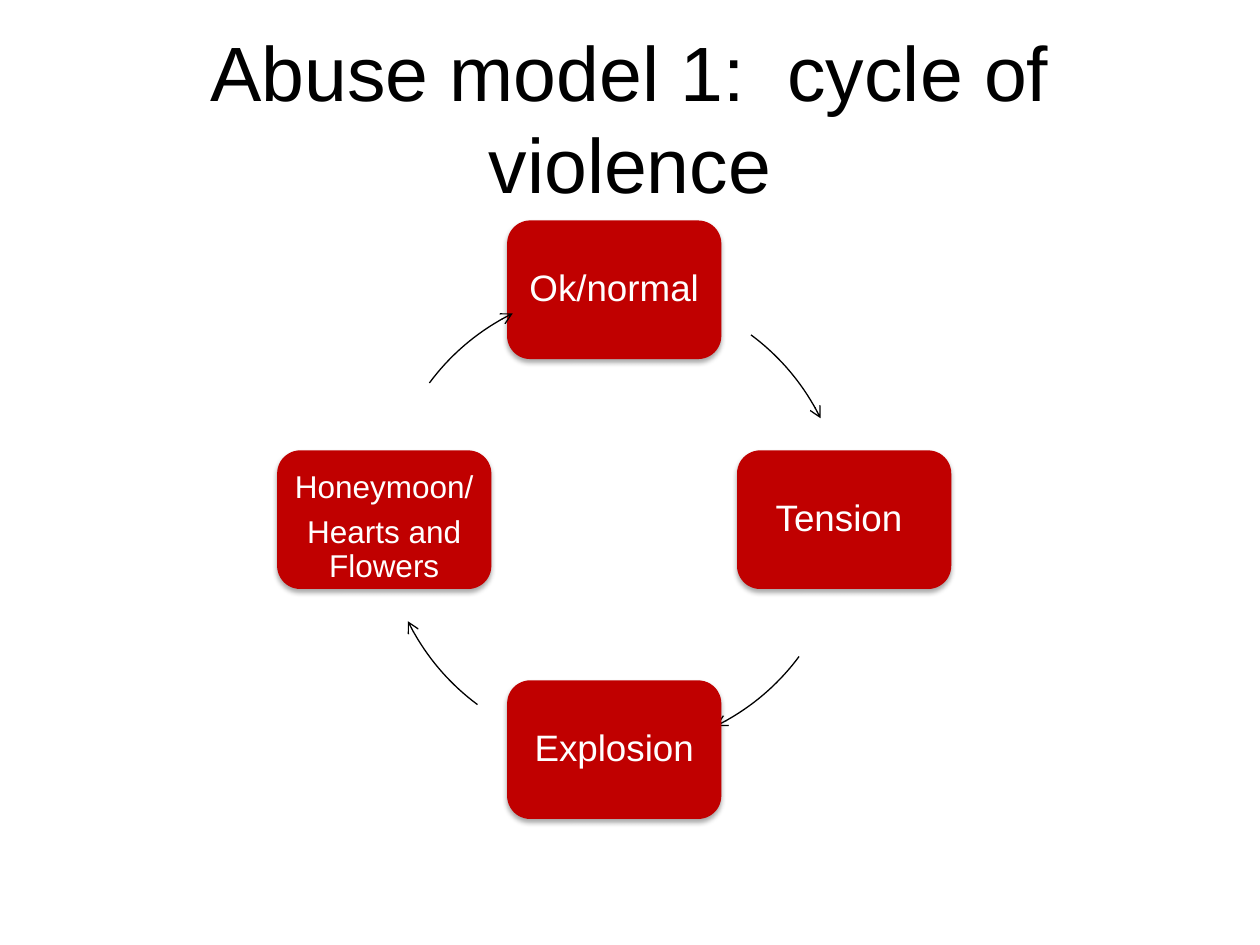
"""Build the cycle of violence slide: four stages on a ring, joined by arc arrows."""
from dataclasses import dataclass
from math import cos, radians, sin

from lxml.etree import SubElement
from pptx import Presentation
from pptx.dml.color import RGBColor
from pptx.enum.shapes import MSO_SHAPE
from pptx.enum.text import MSO_ANCHOR, MSO_AUTO_SIZE, PP_ALIGN
from pptx.oxml.ns import qn
from pptx.shapes.autoshape import Shape
from pptx.slide import Slide
from pptx.util import Pt

BLACK = RGBColor(0x00, 0x00, 0x00)
WHITE = RGBColor(0xFF, 0xFF, 0xFF)
RED = RGBColor(0xC0, 0x00, 0x00)

CENTER_X, CENTER_Y, RADIUS = 351, 297, 131.4
STAGE_WIDTH, STAGE_HEIGHT = 122.4, 79.2
ARC_START, ARC_END = 36.5, 63.8
ARC_UNITS_PER_DEGREE = 0.6

TITLE_FRAME = {"word_wrap": True, "auto_size": MSO_AUTO_SIZE.NONE,
               "vertical_anchor": MSO_ANCHOR.MIDDLE}
TITLE_FONT = {"name": "Arial", "size": Pt(44)}
TITLE_PLACE = {"left": Pt(36), "top": Pt(21.6), "width": Pt(648), "height": Pt(90)}


@dataclass(frozen=True)
class Stage:
    lines: tuple[str, ...]
    angle: float
    size: float = 21
    side_inset: float = 6.3
    top_inset: float = 6.3
    bottom_inset: float = 6.3


STAGES = (
    Stage(("Ok/normal",), 270),
    Stage(("Tension ",), 0),
    Stage(("Explosion",), 90),
    Stage(("Honeymoon/", "Hearts and Flowers"), 180, 18, 4.3, 9, 0),
)


def apply(target: object, values: dict) -> None:
    for name, value in values.items():
        setattr(target, name, value)


def add_soft_shadow(shape: Shape) -> None:
    shape.shadow.inherit = False
    effects = shape._element.spPr.find(qn("a:effectLst"))
    shadow = SubElement(effects, qn("a:outerShdw"), blurRad=str(Pt(3.1)),
                        dist=str(Pt(1.8)), dir="5400000", rotWithShape="0")
    color = SubElement(shadow, qn("a:srgbClr"), val=str(BLACK))
    SubElement(color, qn("a:alpha"), val="35000")


def add_stage(slide: Slide, stage: Stage) -> None:
    middle_x = CENTER_X + RADIUS * cos(radians(stage.angle))
    middle_y = CENTER_Y + RADIUS * sin(radians(stage.angle))
    box = slide.shapes.add_shape(
        MSO_SHAPE.ROUNDED_RECTANGLE, Pt(middle_x - STAGE_WIDTH / 2),
        Pt(middle_y - STAGE_HEIGHT / 2), Pt(STAGE_WIDTH), Pt(STAGE_HEIGHT))
    box.fill.solid()
    box.fill.fore_color.rgb = RED
    box.line.fill.background()
    add_soft_shadow(box)
    frame = box.text_frame
    apply(frame, {"word_wrap": True, "vertical_anchor": MSO_ANCHOR.MIDDLE,
                  "margin_left": Pt(stage.side_inset),
                  "margin_right": Pt(stage.side_inset),
                  "margin_top": Pt(stage.top_inset),
                  "margin_bottom": Pt(stage.bottom_inset)})
    frame.text = "\n".join(stage.lines)
    for paragraph in frame.paragraphs:
        apply(paragraph, {"alignment": PP_ALIGN.CENTER, "line_spacing": 0.9})
        apply(paragraph.font, {"name": "Arial", "size": Pt(stage.size)})
        paragraph.font.color.rgb = WHITE
    for paragraph in frame.paragraphs[:-1]:
        paragraph.space_after = Pt(0.35 * stage.size)


def add_arc_arrow(slide: Slide, stage_angle: float) -> None:
    arc = slide.shapes.add_shape(
        MSO_SHAPE.ARC, Pt(CENTER_X - RADIUS), Pt(CENTER_Y - RADIUS),
        Pt(2 * RADIUS), Pt(2 * RADIUS))
    for index, offset in enumerate((ARC_START, ARC_END)):
        arc.adjustments[index] = (stage_angle + offset) % 360 * ARC_UNITS_PER_DEGREE
    arc.fill.background()
    arc.line.color.rgb = BLACK
    arc.line.width = Pt(0.75)
    arc.shadow.inherit = False
    SubElement(arc.line._get_or_add_ln(), qn("a:tailEnd"), type="arrow")


def add_title(slide: Slide, text: str) -> None:
    title = slide.shapes.title
    apply(title, TITLE_PLACE)
    apply(title.text_frame, TITLE_FRAME)
    title.text_frame.text = text
    paragraph = title.text_frame.paragraphs[0]
    paragraph.alignment = PP_ALIGN.CENTER
    apply(paragraph.font, TITLE_FONT)
    paragraph.font.color.rgb = BLACK


def main() -> None:
    presentation = Presentation()
    apply(presentation, {"slide_width": Pt(720), "slide_height": Pt(540)})
    slide = presentation.slides.add_slide(presentation.slide_layouts[5])
    add_title(slide, "Abuse model 1:  cycle of violence")
    for stage in STAGES:
        add_stage(slide, stage)
        add_arc_arrow(slide, stage.angle)
    presentation.save("out.pptx")


if __name__ == "__main__":
    main()
